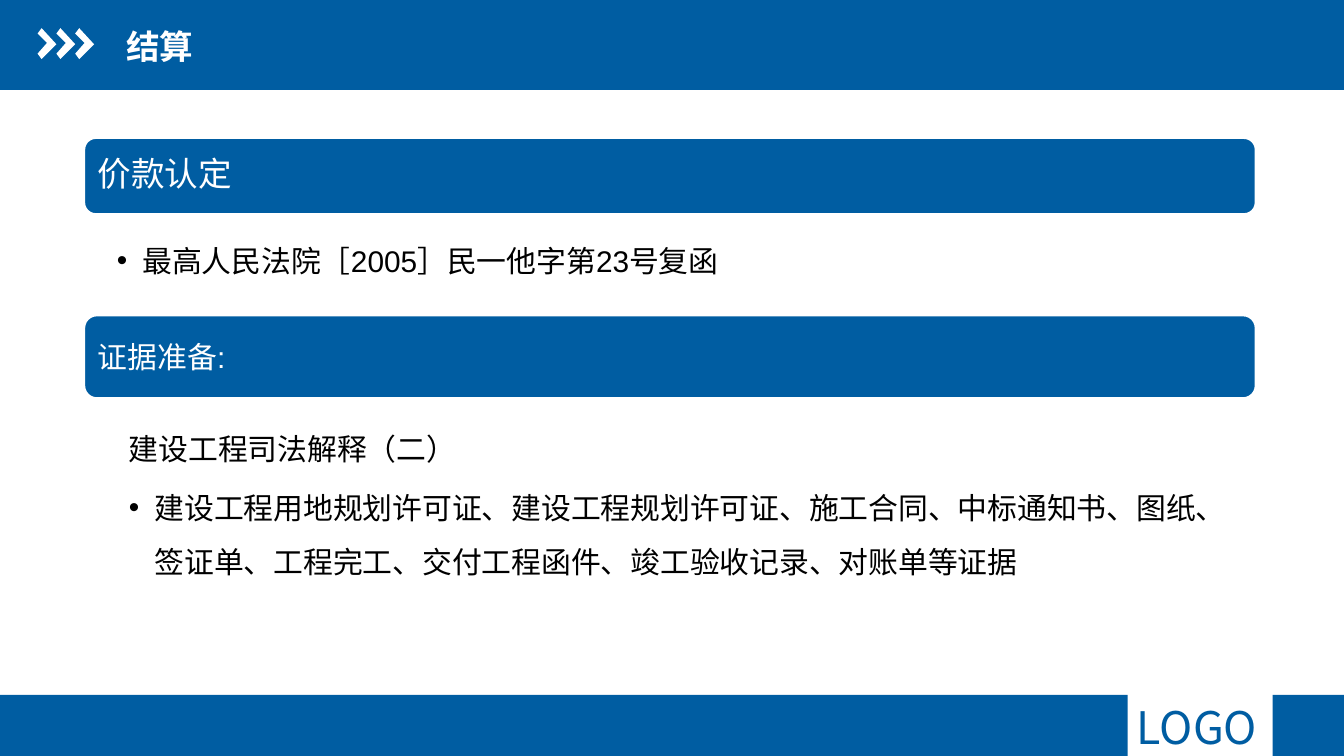
from lxml import etree
from pptx import Presentation
from pptx.dml.color import RGBColor
from pptx.enum.shapes import MSO_SHAPE
from pptx.enum.text import MSO_ANCHOR, PP_ALIGN
from pptx.oxml.ns import qn
from pptx.util import Inches, Pt

RECTANGLE, ROUNDED = MSO_SHAPE.RECTANGLE, MSO_SHAPE.ROUNDED_RECTANGLE
TOP, MIDDLE, LEFT = MSO_ANCHOR.TOP, MSO_ANCHOR.MIDDLE, PP_ALIGN.LEFT
COLOURS = {"blue": "005DA2", "white": "FFFFFF", "black": "000000"}
LATIN_FONT, HAN_FONT = "Arial", "Noto Sans CJK SC"
TITLE_ONLY = 5
PAGE_WIDTH = 10
PAGE_HEIGHT = PAGE_WIDTH * 9 / 16


def colour(name):
    return RGBColor.from_string(COLOURS[name])


def paint(shape, fill, line=None):
    shape.shadow.inherit = False
    shape.fill.solid()
    shape.fill.fore_color.rgb = colour(fill)
    if line:
        shape.line.color.rgb = colour(line)
        shape.line.width = Pt(2)
    else:
        shape.line.fill.background()


def set_frame(frame, insets, anchor, wrap=True):
    """Set insets in inches, given as left, top, right, bottom."""
    left, top, right, bottom = insets
    frame.margin_left, frame.margin_top = Inches(left), Inches(top)
    frame.margin_right, frame.margin_bottom = Inches(right), Inches(bottom)
    frame.vertical_anchor = anchor
    frame.word_wrap = wrap


def add_span(para, text, size, ink, font=LATIN_FONT, bold=False):
    para.alignment = LEFT
    span = para.add_run()
    span.text = text
    span.font.name, span.font.size, span.font.bold = font, Pt(size), bold
    span.font.color.rgb = colour(ink)
    han = etree.SubElement(span.font._element, qn("a:ea"))
    han.set("typeface", HAN_FONT)


def add_bullet(para, indent=0.19):
    properties = para._p.get_or_add_pPr()
    properties.set("marL", str(Inches(indent)))
    properties.set("indent", str(Inches(-indent)))
    etree.SubElement(properties, qn("a:buFont")).set("typeface", LATIN_FONT)
    etree.SubElement(properties, qn("a:buChar")).set("char", "•")


def add_band(page, left, top, width, height):
    band = page.shapes.add_shape(
        RECTANGLE, Inches(left), Inches(top), Inches(width), Inches(height))
    paint(band, "blue")


def add_chevrons(page, left, top, count=3, step=0.14):
    outline = [(0, 0.04), (0.03, 0), (0.14, 0.12), (0.03, 0.23), (0, 0.19), (0.07, 0.11)]
    for index in range(count):
        start = left + index * step
        points = [(Inches(start + x), Inches(top + y)) for x, y in outline]
        builder = page.shapes.build_freeform(*points[0])
        builder.add_line_segments(points[1:], close=True)
        paint(builder.convert_to_shape(), "white")


def add_header(page, text, height):
    add_band(page, 0, 0, PAGE_WIDTH, height)
    add_chevrons(page, 0.28, 0.21)
    title = page.shapes.title
    title.left, title.top = Inches(0.94), Inches(0.13)
    title.width, title.height = Inches(3.54), Inches(0.42)
    set_frame(title.text_frame, (0, 0.05, 0, 0.05), MIDDLE)
    add_span(title.text_frame.paragraphs[0], text, 18, "white", bold=True)
    # The title has to lie in front of the band.
    page.shapes._spTree.append(title._element)


def add_footer(page, top, gap_left, gap_right):
    height = PAGE_HEIGHT - top
    add_band(page, 0, top, gap_left, height)
    add_band(page, gap_right, top, PAGE_WIDTH - gap_right, height)
    box = page.shapes.add_textbox(
        Inches(gap_left - 0.03), Inches(top - 0.01), Inches(1.16), Inches(0.5))
    set_frame(box.text_frame, (0.1, 0.05, 0.1, 0.05), TOP, wrap=False)
    add_span(box.text_frame.paragraphs[0], "LOGO", 24, "blue", HAN_FONT)


def add_heading(page, left, top, width, height, text, size, spacing=1.0, after=0):
    bar = page.shapes.add_shape(
        ROUNDED, Inches(left), Inches(top), Inches(width), Inches(height))
    bar.adjustments[0] = 0.16
    paint(bar, "blue", "white")
    set_frame(bar.text_frame, (0.08, 0.11, 0.08, 0.11), MIDDLE)
    para = bar.text_frame.paragraphs[0]
    para.line_spacing, para.space_after = spacing, Pt(after)
    add_span(para, text, size, "white")


def add_body(page, left, top, width, height, items):
    """Write items, each a pair of text and whether it has a bullet."""
    box = page.shapes.add_textbox(
        Inches(left), Inches(top), Inches(width), Inches(height))
    frame = box.text_frame
    set_frame(frame, (0.25, 0.02, 0.12, 0.02), TOP)
    for index, (text, bulleted) in enumerate(items):
        para = frame.add_paragraph() if index else frame.paragraphs[0]
        if bulleted:
            add_bullet(para)
        para.line_spacing, para.space_after = 1.5, Pt(3)
        add_span(para, text, 16, "black")


def main():
    deck = Presentation()
    deck.slide_width, deck.slide_height = Inches(PAGE_WIDTH), Inches(PAGE_HEIGHT)
    page = deck.slides.add_slide(deck.slide_layouts[TITLE_ONLY])
    add_header(page, "结算", 0.67)
    add_footer(page, 5.17, 8.39, 9.47)

    left, width = 0.62, 8.73
    add_heading(page, left, 1.02, width, 0.58, "价款认定", 18, spacing=0.9, after=6)
    add_body(page, left, 1.65, width, 1.68, [
        ("最高人民法院［2005］民一他字第23号复函", True),
    ])
    add_heading(page, left, 2.34, width, 0.63, "证据准备:", 16)
    add_body(page, left + 0.09, 3.05, width, 1.91, [
        ("建设工程司法解释（二）", False),
        ("建设工程用地规划许可证、建设工程规划许可证、施工合同、中标通知书、图纸、"
         "签证单、工程完工、交付工程函件、竣工验收记录、对账单等证据", True),
    ])
    deck.save("out.pptx")


if __name__ == "__main__":
    main()
